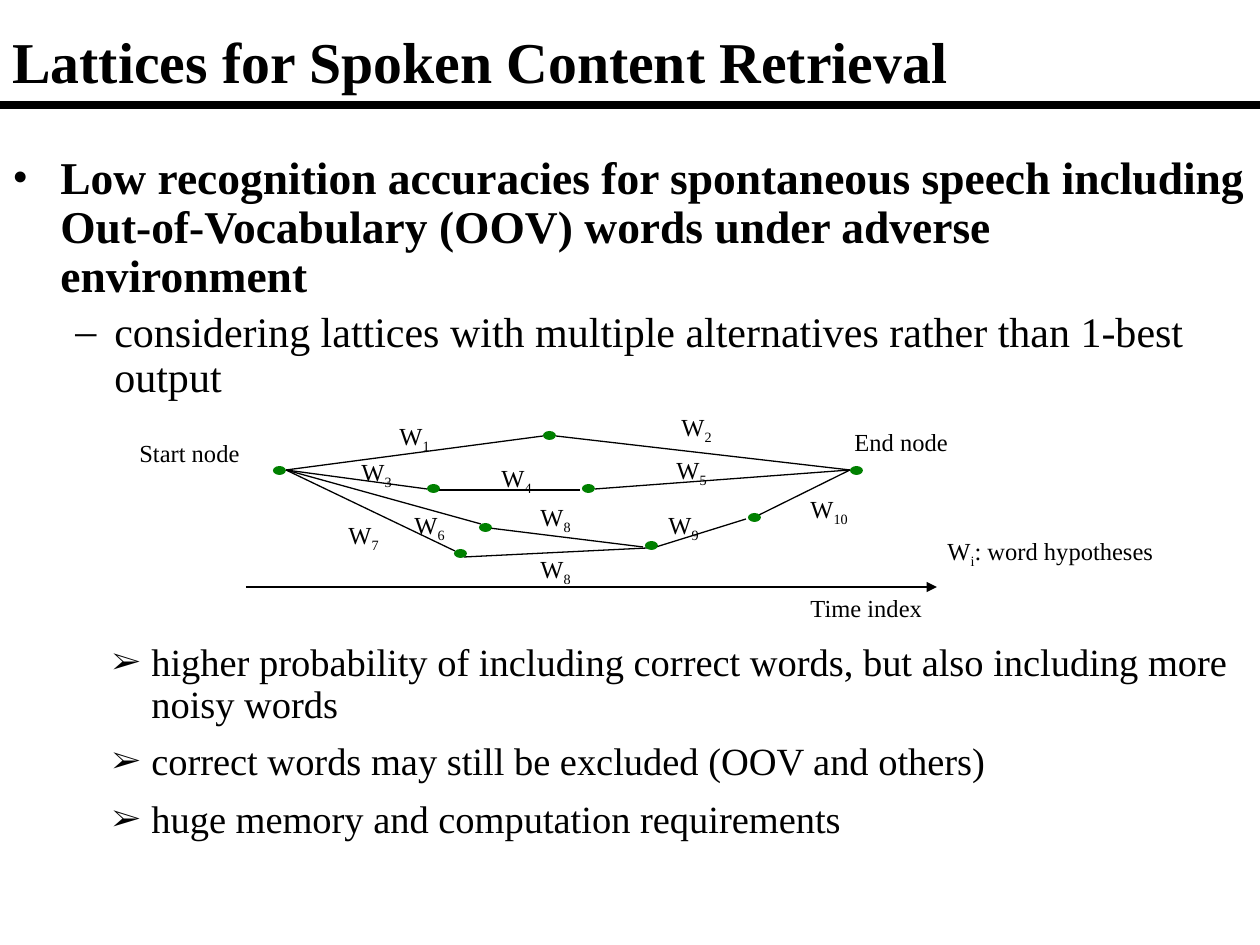
"""Build the slide on word lattices for spoken content retrieval."""
from typing import NamedTuple, Optional

from lxml import etree
from pptx import Presentation
from pptx import util as u
from pptx.dml import color
from pptx.enum import shapes, text
from pptx.oxml import ns

EMU_PER_PX = 914400 / 126
COLOURS = {"ink": "000000", "node": "008000"}
FONT = "Times New Roman"


class Node(NamedTuple):
    x: int
    y: int


class Edge(NamedTuple):
    x1: int
    y1: int
    x2: int
    y2: int


class Label(NamedTuple):
    words: str
    x: int
    y: int
    width: int = 57


class Point(NamedTuple):
    words: str
    size: int
    margin: int
    hang: int
    bullet: str
    level: int = 0
    bold: bool = False
    after: int = 0
    bullet_pct: int = 100


START = (286, 470)
END = (850, 470)

NODES = [
    Node(273, 466), Node(543, 431), Node(645, 541), Node(748, 513), Node(427, 484),
    Node(582, 484), Node(850, 466), Node(454, 549), Node(479, 523),
]
EDGES = [
    Edge(*START, 543, 436), Edge(556, 436, *END),
    Edge(*START, 427, 489), Edge(438, 490, 580, 490), Edge(595, 489, *END),
    Edge(*START, 481, 524), Edge(489, 528, 643, 547),
    Edge(*START, 455, 551), Edge(464, 557, 648, 548),
    Edge(656, 547, 746, 519), Edge(759, 515, *END),
]
LABELS = [
    Label("W_1", 387, 415), Label("W_2", 669, 406), Label("W_3", 349, 451),
    Label("W_4", 489, 457), Label("W_5", 664, 449), Label("W_6", 402, 504),
    Label("W_7", 336, 514), Label("W_8", 528, 496), Label("W_8", 528, 548),
    Label("W_9", 656, 504), Label("W_10", 798, 488, 66),
    Label("Start node", 127, 432, 126), Label("End node", 842, 421, 120),
    Label("Time index", 798, 587, 137), Label("W_i_: word hypotheses", 935, 530, 233),
]
PROBLEM = [
    Point("Low recognition accuracies for spontaneous speech including "
          "Out-of-Vocabulary (OOV) words under adverse environment",
          26, 48, 48, "•", bold=True),
    Point("considering lattices with multiple alternatives rather than 1-best output",
          24, 102, 39, "–", level=1),
]
CONSEQUENCES = [
    Point(words, 22, 139, 39, "➢", level=1, after=5, bullet_pct=80)
    for words in (
        "higher probability of including correct words, but also including more noisy words",
        "correct words may still be excluded (OOV and others)",
        "huge memory and computation requirements",
    )
]


def px(length: int) -> u.Emu:
    """Turn pixels into EMU."""
    return u.Emu(round(length * EMU_PER_PX))


def rgb(name: str) -> color.RGBColor:
    """Look up a named colour."""
    return color.RGBColor.from_string(COLOURS[name])


def add_frame(slide, x: int, y: int, width: int, height: int, wrap: bool = True):
    """Add a text box and return its text frame."""
    frame = slide.shapes.add_textbox(px(x), px(y), px(width), px(height)).text_frame
    frame.word_wrap = wrap
    return frame


def write(paragraph, words: str, *, size: int, bold: bool = False) -> None:
    """Write text in which every second underscore-separated part is a subscript."""
    for index, part in enumerate(words.split("_")):
        run = paragraph.add_run()
        run.text = part
        run.font.name = FONT
        run.font.size = u.Pt(size)
        run.font.bold = bold
        run.font.color.rgb = rgb("ink")
        if index % 2:
            run.font._element.set("baseline", "-25000")


def add_points(slide, points: list[Point], y: int, height: int) -> None:
    """Add a full-width bulleted list."""
    frame = add_frame(slide, 0, y, 1260, height)
    for index, point in enumerate(points):
        paragraph = frame.add_paragraph() if index else frame.paragraphs[0]
        paragraph.level = point.level
        paragraph.line_spacing = 0.9
        paragraph.space_before = u.Pt(point.size * 0.2)
        paragraph.space_after = u.Pt(point.after)
        write(paragraph, point.words, size=point.size, bold=point.bold)
        props = paragraph._p.get_or_add_pPr()
        props.set("marL", str(px(point.margin)))
        props.set("indent", str(-px(point.hang)))
        etree.SubElement(props, ns.qn("a:buSzPct"), val=str(point.bullet_pct * 1000))
        etree.SubElement(props, ns.qn("a:buFont"), typeface=FONT)
        etree.SubElement(props, ns.qn("a:buChar"), char=point.bullet)


def add_edge(slide, edge: Edge, width: float = 0.75, head: Optional[str] = None) -> None:
    """Add a straight line, with an arrowhead at its end if one is named."""
    line = slide.shapes.add_connector(
        shapes.MSO_CONNECTOR.STRAIGHT, *(px(value) for value in edge))
    line.line.color.rgb = rgb("ink")
    line.line.width = u.Pt(width)
    if head:
        etree.SubElement(line.line._get_or_add_ln(), ns.qn("a:tailEnd"), type=head)
    etree.SubElement(line._element.spPr, ns.qn("a:effectLst"))


def add_node(slide, node: Node) -> None:
    """Add a lattice node."""
    dot = slide.shapes.add_shape(
        shapes.MSO_SHAPE.OVAL, px(node.x), px(node.y), px(13), px(9))
    dot.shadow.inherit = False
    dot.fill.solid()
    dot.fill.fore_color.rgb = rgb("node")
    dot.line.fill.background()


def add_label(slide, label: Label) -> None:
    """Add a diagram label."""
    frame = add_frame(slide, label.x, label.y, label.width, 43, wrap=False)
    write(frame.paragraphs[0], label.words, size=14)


def main() -> None:
    """Draw and save the slide."""
    deck = Presentation()
    deck.slide_width, deck.slide_height = px(1260), px(945)
    slide = deck.slides.add_slide(deck.slide_layouts[6])

    title = add_frame(slide, 0, 10, 1259, 100)
    title.vertical_anchor = text.MSO_ANCHOR.MIDDLE
    write(title.paragraphs[0], "Lattices for Spoken Content Retrieval", size=33, bold=True)
    add_edge(slide, Edge(0, 105, 1260, 105), width=4.5)

    add_points(slide, PROBLEM, 149, 260)
    for edge in EDGES:
        add_edge(slide, edge)
    for node in NODES:
        add_node(slide, node)
    for label in LABELS:
        add_label(slide, label)
    add_edge(slide, Edge(246, 587, 937, 587), head="triangle")
    add_points(slide, CONSEQUENCES, 637, 231)

    deck.save("out.pptx")


if __name__ == "__main__":
    main()
